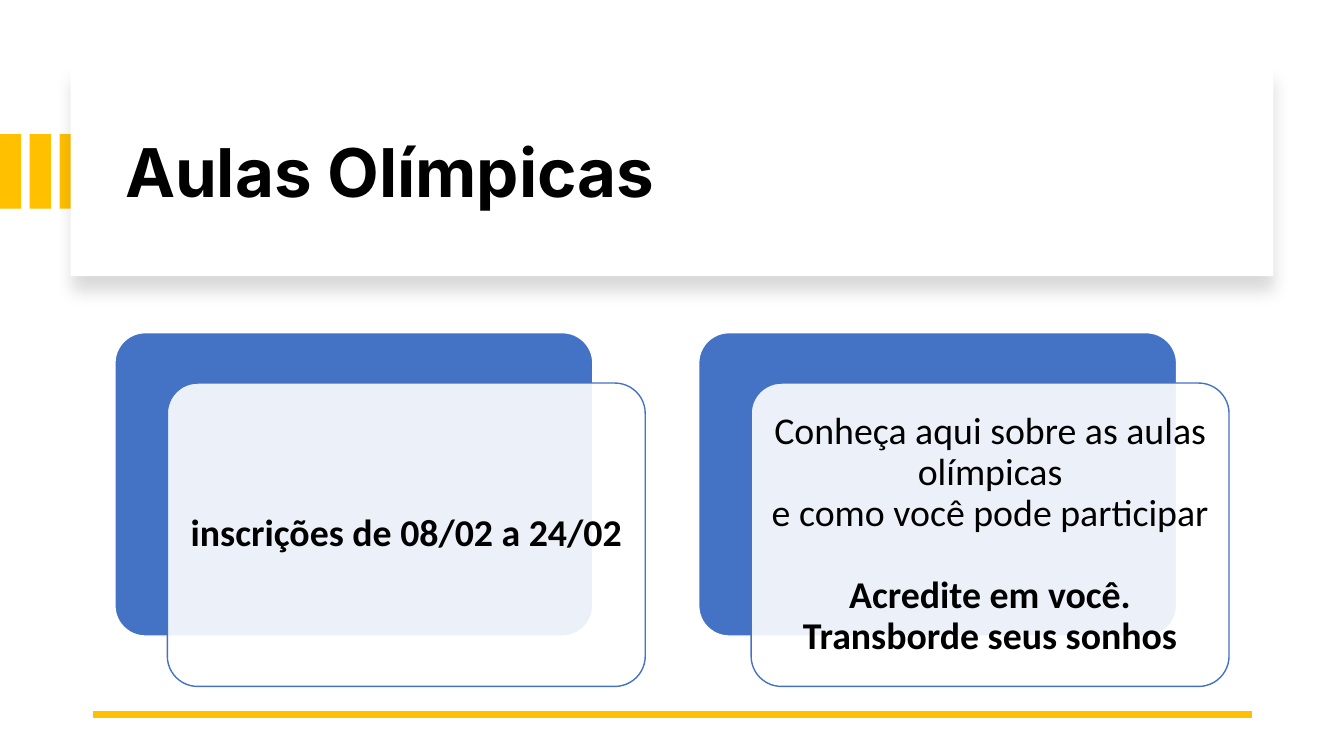
from lxml.etree import SubElement
from pptx import Presentation
from pptx.dml.color import RGBColor
from pptx.enum.shapes import MSO_CONNECTOR, MSO_SHAPE
from pptx.enum.text import MSO_ANCHOR, MSO_AUTO_SIZE, PP_ALIGN
from pptx.oxml import parse_xml
from pptx.oxml.ns import nsdecls, qn
from pptx.util import Inches, Pt

COLORS = {"gold": "FFC000", "blue": "4472C4", "white": "FFFFFF", "black": "000000"}
CARDS = [
    [("inscrições de 08/02 a 24/02", True)],
    [
        ("Conheça aqui sobre as aulas olímpicas\ve como você pode participar", False),
        ("Acredite em você.\vTransborde seus sonhos", True),
    ],
]


def color(name):
    return RGBColor.from_string(COLORS[name])


def add_box(shapes, kind, left, top, width, height, fill, line=None):
    box = shapes.add_shape(kind, Inches(left), Inches(top), Inches(width), Inches(height))
    box.shadow.inherit = False
    box.fill.solid()
    box.fill.fore_color.rgb = color(fill)
    if line:
        box.line.color.rgb = color(line)
        box.line.width = Pt(1)
    else:
        box.line.fill.background()
    return box


def style_paragraph(paragraph, font_name, size, bold, alignment):
    paragraph.alignment = alignment
    paragraph.line_spacing = 0.9
    paragraph.font.name = font_name
    paragraph.font.size = Pt(size)
    paragraph.font.bold = bold
    paragraph.font.color.rgb = color("black")


def add_stripes(page, left, top, width, height, pitch):
    stripes = page.shapes.add_group_shape().shapes
    for index in range(3):
        add_box(stripes, MSO_SHAPE.RECTANGLE, left + index * pitch, top, width, height, "gold")


def add_header(page, left, top, width, height):
    panel = add_box(page.shapes, MSO_SHAPE.RECTANGLE, left, top, width, height, "white")
    effects = panel._element.spPr.find(qn("a:effectLst"))
    effects.append(parse_xml(
        f'<a:outerShdw {nsdecls("a")} blurRad="{Pt(11)}" dist="{Pt(10)}" dir="5400000" '
        f'algn="t" rotWithShape="0"><a:srgbClr val="{COLORS["black"]}">'
        '<a:alpha val="15000"/></a:srgbClr></a:outerShdw>'
    ))
    title = page.shapes.title
    title.left, title.top = Inches(left + 0.44), Inches(top + 0.22)
    title.width, title.height = Inches(width - 0.8), Inches(height - 0.37)
    frame = title.text_frame
    frame.text = "Aulas Olímpicas"
    frame.auto_size = MSO_AUTO_SIZE.NONE
    frame.vertical_anchor = MSO_ANCHOR.MIDDLE
    style_paragraph(frame.paragraphs[0], "Inter", 48, True, PP_ALIGN.LEFT)
    panel._element.addnext(title._element)


def add_rule(page, left, top, width):
    rule = page.shapes.add_connector(
        MSO_CONNECTOR.STRAIGHT, Inches(left + width), Inches(top), Inches(left), Inches(top)
    )
    rule.line.color.rgb = color("gold")
    rule.line.width = Pt(4.5)
    SubElement(rule._element.spPr, qn("a:effectLst"))


def add_card(page, left, top, width, height, texts):
    shapes = page.shapes.add_group_shape().shapes
    front_left, front_top, inset = left + 0.52, top + 0.5, 0.09
    back = add_box(shapes, MSO_SHAPE.ROUNDED_RECTANGLE, left, top, width, height, "blue", "white")
    front = add_box(
        shapes, MSO_SHAPE.ROUNDED_RECTANGLE, front_left, front_top, width, height, "white", "blue"
    )
    for box in (back, front):
        box.adjustments[0] = 0.1
    tint = front._element.spPr.find(qn("a:solidFill"))[0]
    SubElement(tint, qn("a:alpha"), val="90000")

    label = shapes.add_textbox(
        Inches(front_left + inset), Inches(front_top + inset),
        Inches(width - 2 * inset), Inches(height - 2 * inset),
    )
    frame = label.text_frame
    frame.word_wrap = True
    frame.vertical_anchor = MSO_ANCHOR.MIDDLE
    frame.margin_left = frame.margin_right = Inches(0.11)
    frame.margin_top = frame.margin_bottom = Inches(0.11)
    for index, (text, bold) in enumerate(texts):
        paragraph = frame.add_paragraph() if index else frame.paragraphs[0]
        paragraph.text = text
        style_paragraph(paragraph, "Calibri", 27, bold, PP_ALIGN.CENTER)
        if index:
            paragraph.space_before = Pt(29)


def main():
    deck = Presentation()
    deck.slide_width, deck.slide_height = Inches(13.33), Inches(7.5)
    page = deck.slides.add_slide(deck.slide_layouts[5])
    page.background.fill.solid()
    page.background.fill.fore_color.rgb = color("white")
    add_stripes(page, 0, 1.33, 0.21, 0.74, 0.295)
    add_header(page, 0.7, 0.67, 11.93, 2.07)
    add_rule(page, 0.92, 7.09, 11.5)
    for index, texts in enumerate(CARDS):
        add_card(page, 1.14 + index * 5.79, 3.3, 4.74, 3.01, texts)
    deck.save("out.pptx")


if __name__ == "__main__":
    main()
